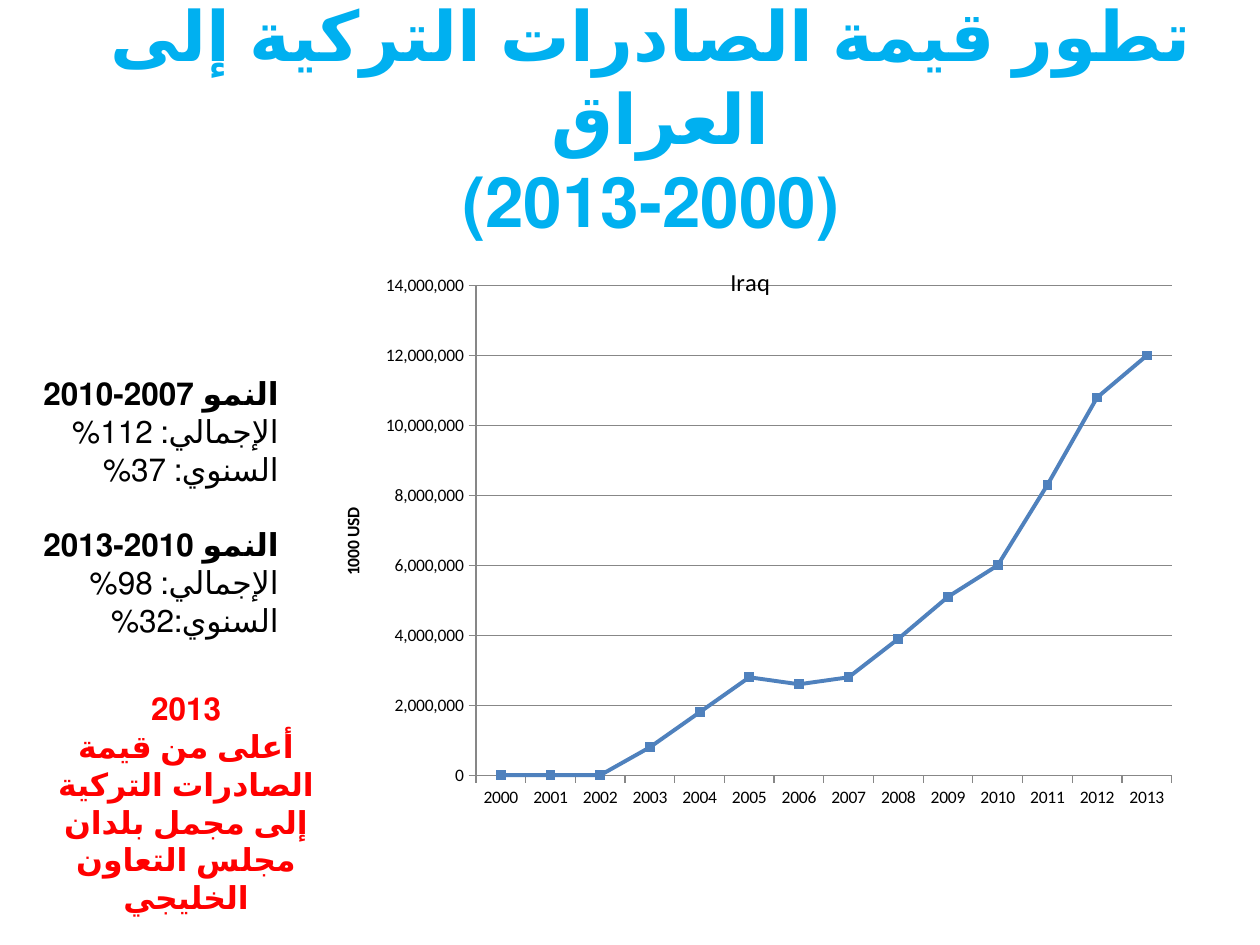
from dataclasses import dataclass

from lxml.etree import SubElement
from pptx import Presentation
from pptx.chart.data import CategoryChartData
from pptx.dml.color import RGBColor
from pptx.enum.chart import XL_CHART_TYPE as ChartType, XL_MARKER_STYLE as Marker, XL_TICK_MARK as Tick
from pptx.enum.lang import MSO_LANGUAGE_ID as Language
from pptx.enum.text import MSO_ANCHOR as Anchor, MSO_AUTO_SIZE as AutoSize, PP_ALIGN as Align
from pptx.oxml.ns import qn
from pptx.util import Cm, Pt


@dataclass(frozen=True)
class Theme:
    font: str = "Calibri"
    heading: RGBColor = RGBColor(0x00, 0xB0, 0xF0)
    ink: RGBColor = RGBColor(0x00, 0x00, 0x00)
    alert: RGBColor = RGBColor(0xFF, 0x00, 0x00)
    series: RGBColor = RGBColor(0x4F, 0x81, 0xBD)
    grid: RGBColor = RGBColor(0x87, 0x87, 0x87)
    heading_size: float = 39.6
    body_size: float = 18
    chart_title_size: float = 14
    chart_size: float = 10


@dataclass(frozen=True)
class Box:
    """A rectangle in centimetres."""
    left: float
    top: float
    width: float
    height: float

    def lengths(self) -> tuple[Cm, Cm, Cm, Cm]:
        return Cm(self.left), Cm(self.top), Cm(self.width), Cm(self.height)


@dataclass(frozen=True)
class Line:
    text: str
    bold: bool = False
    gap: float = 0


@dataclass(frozen=True)
class TextBlock:
    box: Box
    lines: list[Line]
    color: RGBColor
    size: float
    align: Align
    anchor: Anchor = Anchor.TOP
    auto_size: AutoSize = AutoSize.SHAPE_TO_FIT_TEXT


THEME = Theme()
BLOCKS = [
    TextBlock(
        Box(1.27, 0.76, 23.7, 3.18),
        [Line("تطور قيمة الصادرات التركية إلى العراق \v(2000-2013)", bold=True)],
        THEME.heading, THEME.heading_size, Align.CENTER, Anchor.MIDDLE, AutoSize.NONE,
    ),
    TextBlock(
        Box(-0.43, 7.42, 6.3, 5.64),
        [
            Line("النمو 2007-2010", bold=True),
            Line("الإجمالي:\t 112%"),
            Line("السنوي:\t 37%"),
            Line("النمو 2010-2013", bold=True, gap=21.5),
            Line("الإجمالي: \t98%"),
            Line("السنوي:\t32%"),
        ],
        THEME.ink, THEME.body_size, Align.RIGHT,
    ),
    TextBlock(
        Box(0.64, 13.77, 6.22, 3.33),
        [
            Line("2013", bold=True),
            Line("أعلى من قيمة الصادرات التركية إلى مجمل بلدان مجلس التعاون الخليجي", bold=True),
        ],
        THEME.alert, THEME.body_size, Align.CENTER,
    ),
]

CHART_BOX = Box(6.35, 4.87, 17.55, 11.85)
PLOT_AREA = {"x": 0.185, "y": 0.075, "w": 0.799, "h": 0.833}
YEARS = [str(year) for year in range(2000, 2014)]
EXPORTS_MILLIONS = [0, 0, 0, 0.8, 1.8, 2.8, 2.6, 2.8, 3.9, 5.1, 6, 8.3, 10.8, 12]


def add_text(s, block: TextBlock) -> None:
    """Add a right-to-left text box."""
    tf = s.shapes.add_textbox(*block.box.lengths()).text_frame
    tf.word_wrap = True
    tf.auto_size = block.auto_size
    tf.vertical_anchor = block.anchor
    for i, line in enumerate(block.lines):
        p = tf.add_paragraph() if i else tf.paragraphs[0]
        p.text = line.text
        p.alignment = block.align
        p.space_before = Pt(line.gap)
        p._p.get_or_add_pPr().set("rtl", "1")
        p.font.name = THEME.font
        p.font.size = Pt(block.size)
        p.font.bold = line.bold
        p.font.color.rgb = block.color
        for r in p.runs:
            r.font.language_id = Language.ARABIC


def set_title(owner_title, text: str, size: float, bold: bool) -> None:
    p = owner_title.text_frame.paragraphs[0]
    p.text = text
    p.font.name = THEME.font
    p.font.size = Pt(size)
    p.font.bold = bold
    p.font.color.rgb = THEME.ink


def fix_plot_area(chart) -> None:
    """Pin the inner plot area and let the title overlap it."""
    root = chart._chartSpace
    root.xpath("c:chart/c:title/c:overlay")[0].set("val", "1")
    plot_area = root.xpath("c:chart/c:plotArea")[0]
    for old in plot_area.xpath("c:layout"):
        plot_area.remove(old)
    layout = SubElement(plot_area, qn("c:layout"))
    plot_area.insert(0, layout)
    manual = SubElement(layout, qn("c:manualLayout"))
    settings = {"layoutTarget": "inner", "xMode": "edge", "yMode": "edge", **PLOT_AREA}
    for name, value in settings.items():
        SubElement(manual, qn(f"c:{name}")).set("val", str(value))


def add_export_chart(s) -> None:
    data = CategoryChartData(number_format="#,##0")
    data.categories = YEARS
    data.add_series("Iraq", [round(v * 1_000_000) for v in EXPORTS_MILLIONS])
    chart = s.shapes.add_chart(ChartType.LINE_MARKERS, *CHART_BOX.lengths(), data).chart
    chart.has_legend = False
    chart.font.name = THEME.font
    chart.font.size = Pt(THEME.chart_size)
    chart.font.color.rgb = THEME.ink
    chart.has_title = True
    set_title(chart.chart_title, "Iraq", THEME.chart_title_size, bold=False)

    values = chart.value_axis
    values.minimum_scale, values.maximum_scale, values.major_unit = 0, 14_000_000, 2_000_000
    values.tick_labels.number_format = "#,##0"
    values.tick_labels.number_format_is_linked = False
    values.has_major_gridlines = True
    set_title(values.axis_title, "1000 USD", THEME.chart_size, bold=True)
    for axis in (values, chart.category_axis):
        axis.major_tick_mark = Tick.OUTSIDE
    for line in (values.major_gridlines.format.line, values.format.line, chart.category_axis.format.line):
        line.color.rgb = THEME.grid
        line.width = Pt(0.75)

    plot = chart.plots[0]
    plot.vary_by_categories = False
    series = plot.series[0]
    series.smooth = False
    series.format.line.color.rgb = THEME.series
    series.format.line.width = Pt(2.25)
    series.marker.style = Marker.SQUARE
    series.marker.size = 5
    series.marker.format.fill.solid()
    series.marker.format.fill.fore_color.rgb = THEME.series
    series.marker.format.line.color.rgb = THEME.series
    fix_plot_area(chart)


def main() -> None:
    prs = Presentation()
    prs.slide_width, prs.slide_height = Cm(25.4), Cm(19.05)
    s = prs.slides.add_slide(prs.slide_layouts[6])
    add_export_chart(s)
    for block in BLOCKS:
        add_text(s, block)
    prs.save("out.pptx")


if __name__ == "__main__":
    main()
